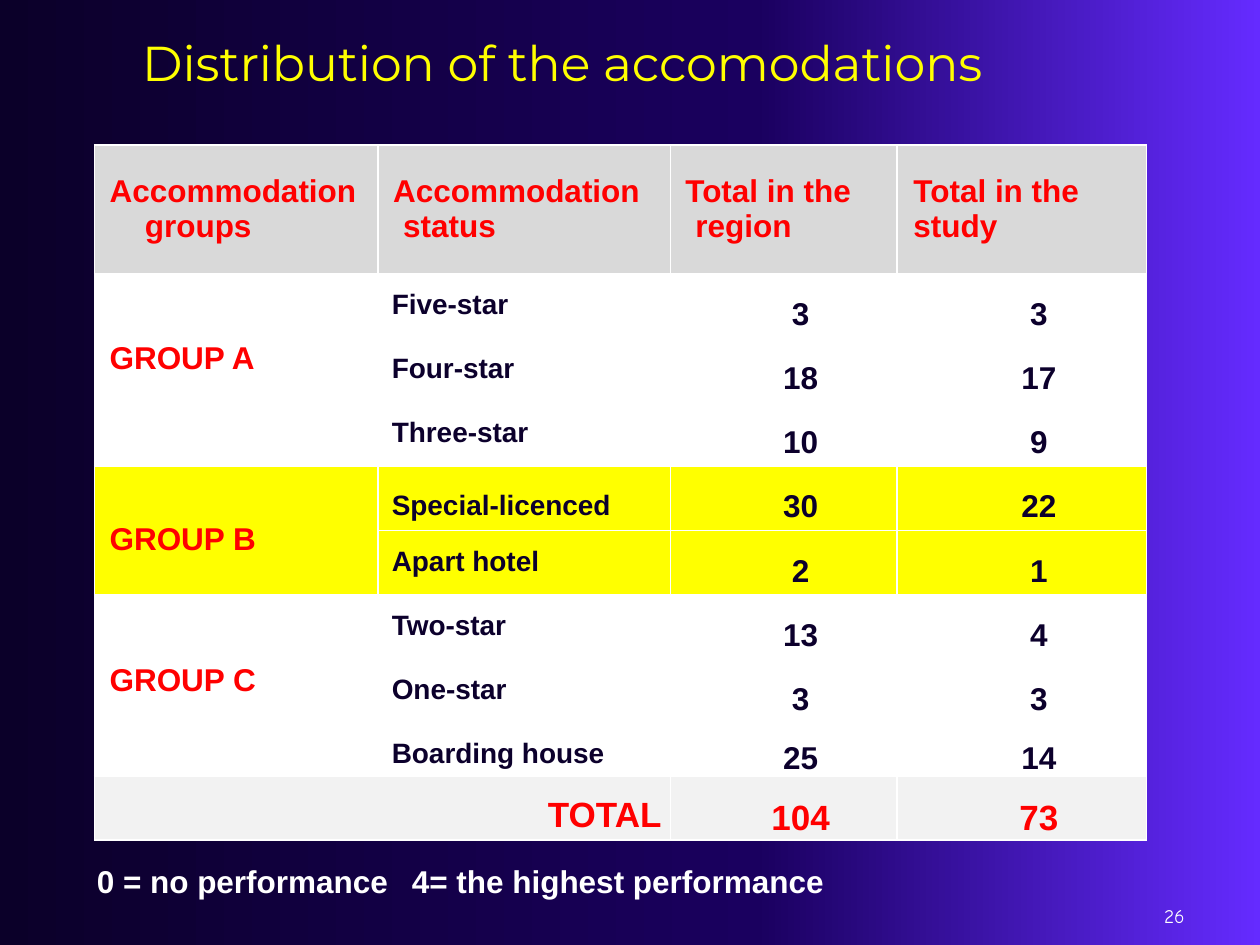
from lxml import etree
from pptx import Presentation
from pptx.dml.color import RGBColor
from pptx.enum.text import MSO_ANCHOR, PP_ALIGN
from pptx.oxml.ns import qn
from pptx.util import Inches, Pt

TOP, MIDDLE = MSO_ANCHOR.TOP, MSO_ANCHOR.MIDDLE
LEFT, CENTER, RIGHT = PP_ALIGN.LEFT, PP_ALIGN.CENTER, PP_ALIGN.RIGHT

COLORS = {
    "night": "0B0029", "indigo": "1A005F", "violet": "652BFF",
    "ink": "0C002C", "red": "FF0000", "yellow": "FFFF00",
    "white": "FFFFFF", "header": "D9D9D9", "total": "F2F2F2",
}


def style(para, size, color, font="Arial", bold=True, align=LEFT, margin=0, indent=0):
    para.alignment = align
    para.font.size = Pt(size)
    para.font.name = font
    para.font.bold = bold
    para.font.color.rgb = RGBColor.from_string(COLORS[color])
    properties = para._p.get_or_add_pPr()
    properties.set("marL", str(Inches(margin)))
    properties.set("indent", str(Inches(indent)))


def fill_cell(cell, text, size, color, anchor=MIDDLE, align=LEFT, indent=0.0):
    cell.vertical_anchor = anchor
    cell.margin_left = cell.margin_right = Inches(0.07)
    cell.margin_top = cell.margin_bottom = 0
    para = cell.text_frame.paragraphs[0]
    para.text = text
    style(para, size, color, align=align, indent=indent)
    para.line_spacing = 1.5
    para.space_before = para.space_after = Pt(3)


deck = Presentation()
deck.slide_width, deck.slide_height = Inches(10), Inches(7.5)
page = deck.slides.add_slide(deck.slide_layouts[6])

# Background gradient, left to right
background = page.background.fill
background.gradient()
background.gradient_angle = 0
stops = next(page.element.iter(qn("a:gsLst")))
for stop in list(stops):
    stops.remove(stop)
for percent, name in ((0, "night"), (60, "indigo"), (100, "violet")):
    stop = etree.SubElement(stops, qn("a:gs"), pos=str(percent * 1000))
    etree.SubElement(stop, qn("a:srgbClr"), val=COLORS[name])

# Table grid
widths = [2.25, 2.32, 1.8, 1.98]
heights = [1.02] + [0.51] * 7 + [0.38, 0.51]
frame = page.shapes.add_table(len(heights), len(widths), Inches(0.75), Inches(1.15),
                              Inches(sum(widths)), Inches(sum(heights)))
table = frame.table
table.first_row = table.horz_banding = False
for column, width in zip(table.columns, widths):
    column.width = Inches(width)
for row, height in zip(table.rows, heights):
    row.height = Inches(height)

# Header: text, left margin and first-line indent
headers = [
    ("Accommodation groups", 0.4, -0.28),
    ("Accommodation status", 0.2, -0.08),
    ("Total in the region", 0.2, -0.08),
    ("Total in the\nstudy", 0.13, 0),
]
for cell, (text, margin, indent) in zip(table.rows[0].cells, headers):
    cell.vertical_anchor = MIDDLE
    cell.margin_left = cell.margin_right = cell.margin_top = cell.margin_bottom = 0
    cell.text_frame.text = text
    for para in cell.text_frame.paragraphs:
        style(para, 18, "red", margin=margin, indent=indent)

# Groups with their accommodation rows
groups = [
    ("GROUP A", TOP, [("Five-star", 3, 3), ("Four-star", 18, 17), ("Three-star", 10, 9)]),
    ("GROUP B", MIDDLE, [("Special-licenced", 30, 22), ("Apart hotel", 2, 1)]),
    ("GROUP C", TOP, [("Two-star", 13, 4), ("One-star", 3, 3), ("Boarding house", 25, 14)]),
]
row_fills = ["header"]
top_row = 1
for group, anchor, entries in groups:
    group_cell = table.cell(top_row, 0)
    group_cell.merge(table.cell(top_row + len(entries) - 1, 0))
    fill_cell(group_cell, group, 18, "red", anchor, indent=0.05)
    if anchor == TOP:
        group_cell.margin_top = Inches(0.4)
    for row_index, (status, region, study) in enumerate(entries, top_row):
        status_anchor = MIDDLE if status == "Special-licenced" else TOP
        fill_cell(table.cell(row_index, 1), status, 16, "ink", status_anchor, indent=0.04)
        for column_index, count in ((2, region), (3, study)):
            fill_cell(table.cell(row_index, column_index), str(count), 18, "ink",
                      align=CENTER, indent=0.27)
        row_fills.append("yellow" if group == "GROUP B" else "white")
    top_row += len(entries)

# Total row
table.cell(top_row, 0).merge(table.cell(top_row, 1))
fill_cell(table.cell(top_row, 0), "TOTAL", 20, "red", TOP, RIGHT, 0.27)
for column_index, count in ((2, "104"), (3, "73")):
    fill_cell(table.cell(top_row, column_index), count, 20, "red", align=CENTER, indent=0.27)
row_fills.append("total")

# Cell borders and fills
for row, fill_name in zip(table.rows, row_fills):
    for cell in row.cells:
        properties = cell._tc.get_or_add_tcPr()
        for side in ("a:lnL", "a:lnR", "a:lnT", "a:lnB"):
            line = etree.SubElement(properties, qn(side), w=str(Pt(1)))
            solid = etree.SubElement(line, qn("a:solidFill"))
            etree.SubElement(solid, qn("a:srgbClr"), val=COLORS["white"])
        cell.fill.solid()
        cell.fill.fore_color.rgb = RGBColor.from_string(COLORS[fill_name])

# Title, page number and scale note
texts = [
    ("Distribution of the accomodations", (0.75, 0.21, 8.58, 0.88), TOP,
     dict(size=28, color="yellow", font="Montserrat", bold=False, indent=0.28)),
    ("26", (7.17, 7.13, 2.33, 0.28), MIDDLE,
     dict(size=11, color="white", font="Comic Neue", bold=False, align=RIGHT)),
    ("0 = no performance\t4= the highest performance", (0.67, 6.79, 7.56, 0.4), TOP,
     dict(size=18, color="white")),
]
for text, place, anchor, look in texts:
    box = page.shapes.add_textbox(*(Inches(length) for length in place))
    box.text_frame.word_wrap = True
    box.text_frame.vertical_anchor = anchor
    para = box.text_frame.paragraphs[0]
    para.text = text
    style(para, **look)
    if "\t" in text:
        tabs = etree.SubElement(para._p.pPr, qn("a:tabLst"))
        etree.SubElement(tabs, qn("a:tab"), pos=str(Inches(2.59)), algn="l")
        para._p.pPr.insert(0, tabs)

deck.save("out.pptx")
